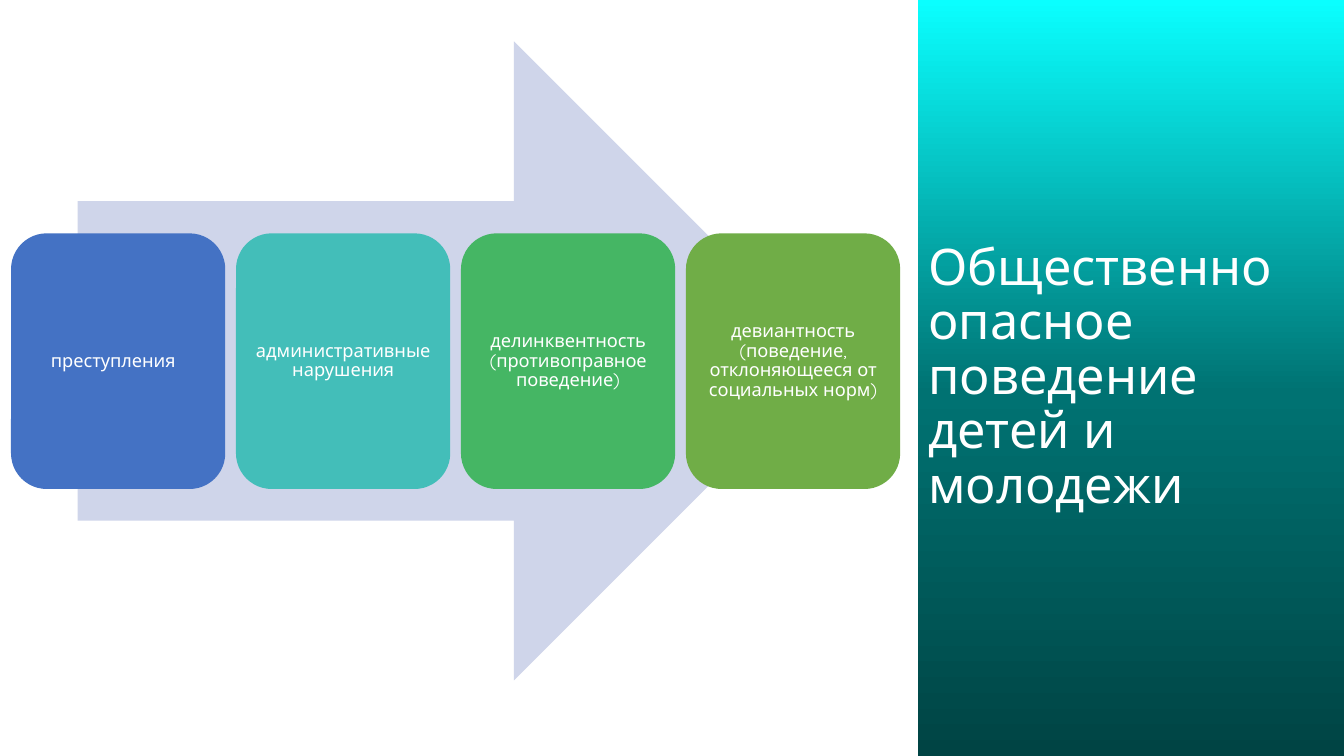
from copy import deepcopy
from pptx import Presentation
from pptx.dml.color import RGBColor
from pptx.enum.shapes import MSO_SHAPE
from pptx.enum.text import MSO_ANCHOR, MSO_AUTO_SIZE, PP_ALIGN
from pptx.util import Pt

HUES = {
    "white": "FFFFFF", "arrow": "CFD5EA",
    "blue": "4472C4", "teal": "43BEB9", "green": "45B664", "olive": "70AD47",
    "deep": "004444", "mid": "007272", "cyan": "0AFFFF",
}


def color(name):
    return RGBColor.from_string(HUES[name])


def write(shape, text, size, align):
    frame = shape.text_frame
    for key, value in {"text": text, "word_wrap": True,
                       "auto_size": MSO_AUTO_SIZE.NONE,
                       "vertical_anchor": MSO_ANCHOR.MIDDLE}.items():
        setattr(frame, key, value)
    para = frame.paragraphs[0]
    para.alignment = align
    para.line_spacing = 0.9
    font = para.runs[0].font
    for key, value in {"name": "Quicksand", "size": Pt(size), "bold": False}.items():
        setattr(font, key, value)
    font.color.rgb = color("white")


deck = Presentation()
deck.slide_width, deck.slide_height = Pt(960), Pt(540)
slide = deck.slides.add_slide(deck.slide_layouts[5])

# Title panel with a vertical gradient
title = slide.shapes.title
for key, value in {"left": 655.7, "top": 0, "width": 304.3, "height": 540}.items():
    setattr(title, key, Pt(value))
write(title, "Общественно опасное поведение детей и молодежи", 36, PP_ALIGN.LEFT)
fill = title.fill
fill.gradient()
fill.gradient_angle = 90
first = fill.gradient_stops[0]._gs
first.addnext(deepcopy(first))
for stop, (name, place) in zip(fill.gradient_stops,
                               [("deep", 0), ("mid", 0.48), ("cyan", 1)]):
    stop.color.rgb = color(name)
    stop.position = place

# Arrow behind the cards
group = slide.shapes.add_group_shape()
arrow = group.shapes.add_shape(MSO_SHAPE.RIGHT_ARROW,
                               Pt(55.4), Pt(29.5), Pt(540), Pt(456.5))
arrow.shadow.inherit = False
arrow.fill.solid()
arrow.fill.fore_color.rgb = color("arrow")
arrow.line.fill.background()

# Row of cards: text, fill, right inset
cards = [
    ("преступления", "blue", 10.8),
    ("административные нарушения", "teal", 3.6),
    ("делинквентность (противоправное поведение)", "green", 3.6),
    ("девиантность (поведение, отклоняющееся от социальных норм)", "olive", 3.6),
]
for num, (text, hue, inset) in enumerate(cards):
    card = group.shapes.add_shape(MSO_SHAPE.ROUNDED_RECTANGLE,
                                  Pt(7.9 + 160.7 * num), Pt(166.7), Pt(153), Pt(182.6))
    card.shadow.inherit = False
    card.fill.solid()
    card.fill.fore_color.rgb = color(hue)
    card.line.fill.background()
    write(card, text, 13, PP_ALIGN.CENTER)
    for side in ("left", "top", "bottom"):
        setattr(card.text_frame, "margin_" + side, Pt(3.6))
    card.text_frame.margin_right = Pt(inset)

deck.save("out.pptx")
